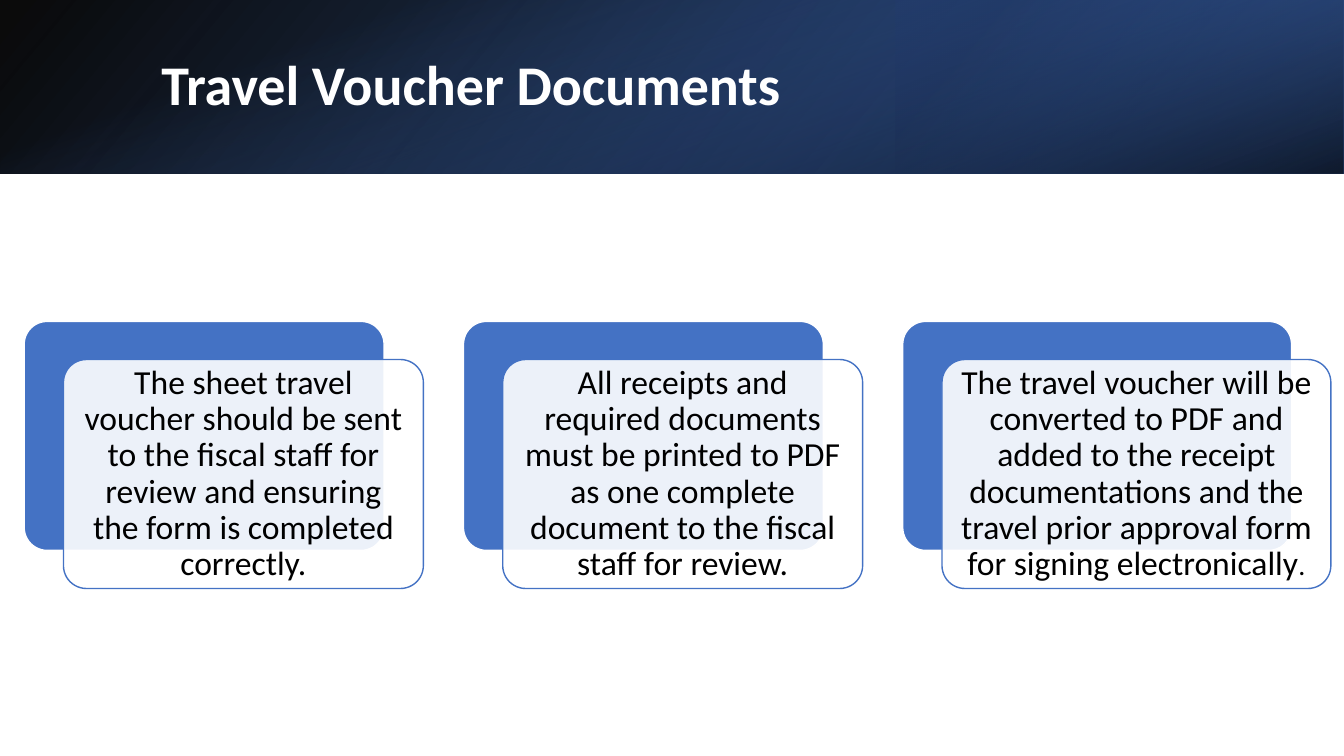
from dataclasses import dataclass

from lxml.etree import SubElement
from pptx import Presentation
from pptx.dml.color import RGBColor
from pptx.enum.shapes import MSO_SHAPE
from pptx.enum.text import MSO_ANCHOR, PP_ALIGN
from pptx.oxml.ns import qn
from pptx.shapes.autoshape import Shape
from pptx.slide import Slide
from pptx.util import Cm, Pt


@dataclass(frozen=True)
class Theme:
    font: str = "Calibri"
    blue: str = "4472C4"
    deep_blue: str = "2F5597"
    navy: str = "203864"
    black: str = "000000"
    white: str = "FFFFFF"
    title_size: int = 40
    body_size: int = 24
    ending_size: int = 20
    panel_opacity: int = 90


@dataclass(frozen=True)
class Stop:
    position: int
    color: str
    opacity: int


@dataclass(frozen=True)
class Band:
    left: float
    top: float
    width: float
    height: float
    rotation: int
    flipped: bool
    angle: int
    stops: tuple[Stop, ...]


@dataclass(frozen=True)
class Card:
    width: float
    text: str
    ending: str = ""


THEME = Theme()
PAGE_WIDTH, PAGE_HEIGHT = 33.87, 19.05
HEADER_HEIGHT = 4.37
BAND_SHIFT = (PAGE_WIDTH - HEADER_HEIGHT) / 2
ACCENT_WIDTH = PAGE_WIDTH / 3

CARD_LEFT, CARD_TOP, CARD_HEIGHT = 0.61, 8.1, 5.77
CARD_PITCH = 11.07
PANEL_SHIFT_X, PANEL_SHIFT_Y = 0.99, 0.96
PANEL_INSET = 0.25

BANDS = (
    Band(0, 0, PAGE_WIDTH, HEADER_HEIGHT, 0, True, 140,
         (Stop(0, THEME.black, 96), Stop(100, THEME.deep_blue, 100))),
    Band(PAGE_WIDTH - ACCENT_WIDTH, 0, ACCENT_WIDTH, HEADER_HEIGHT, 180, True, 320,
         (Stop(19, THEME.navy, 68), Stop(100, THEME.blue, 79))),
    Band(BAND_SHIFT, -BAND_SHIFT, HEADER_HEIGHT, PAGE_WIDTH, 90, False, 340,
         (Stop(23, THEME.blue, 0), Stop(99, THEME.black, 74))),
)

CARDS = (
    Card(9.07, "The sheet travel voucher should be sent to the fiscal staff for review "
               "and ensuring the form is completed correctly."),
    Card(9.07, "All receipts and required documents must be printed to PDF as one "
               "complete document to the fiscal staff for review."),
    Card(9.8, "The travel voucher will be converted to PDF and added to the receipt "
              "documentations and the travel prior approval form for signing "
              "electronically", "."),
)


def add_alpha(color_element, opacity: int) -> None:
    SubElement(color_element, qn("a:alpha")).set("val", str(opacity * 1000))


def add_band(page: Slide, band: Band) -> None:
    shape = page.shapes.add_shape(MSO_SHAPE.RECTANGLE, Cm(band.left), Cm(band.top),
                                  Cm(band.width), Cm(band.height))
    shape.shadow.inherit = False
    shape.line.fill.background()
    shape.rotation = band.rotation
    properties = shape._element.spPr
    if band.flipped:
        properties.find(qn("a:xfrm")).set("flipH", "1")
    shape.fill.gradient()
    gradient = properties.find(qn("a:gradFill"))
    gradient.attrib.clear()
    for child in list(gradient):
        gradient.remove(child)
    stop_list = SubElement(gradient, qn("a:gsLst"))
    for stop in band.stops:
        entry = SubElement(stop_list, qn("a:gs"), pos=str(stop.position * 1000))
        color = SubElement(entry, qn("a:srgbClr"), val=stop.color)
        add_alpha(color, stop.opacity)
    SubElement(gradient, qn("a:lin"), ang=str(band.angle * 60000), scaled="0")


def style_span(span, size: int, color: str, bold: bool = False) -> None:
    span.font.name = THEME.font
    span.font.size = Pt(size)
    span.font.bold = bold
    span.font.color.rgb = RGBColor.from_string(color)


def add_title(page: Slide, text: str) -> None:
    title = page.shapes.title
    page.shapes._spTree.append(title._element)
    title.left, title.top = Cm(3.81), Cm(0.97)
    title.width, title.height = Cm(27.89), Cm(2.44)
    frame = title.text_frame
    frame.text = text
    frame.vertical_anchor = MSO_ANCHOR.MIDDLE
    para = frame.paragraphs[0]
    para.alignment = PP_ALIGN.LEFT
    para.line_spacing = 0.9
    style_span(para.runs[0], THEME.title_size, THEME.white, bold=True)


def add_rounded(page: Slide, left: float, top: float, width: float,
                fill: str, line: str) -> Shape:
    box = page.shapes.add_shape(MSO_SHAPE.ROUNDED_RECTANGLE, Cm(left), Cm(top),
                                Cm(width), Cm(CARD_HEIGHT))
    box.adjustments[0] = 0.1
    box.shadow.inherit = False
    box.fill.solid()
    box.fill.fore_color.rgb = RGBColor.from_string(fill)
    box.line.color.rgb = RGBColor.from_string(line)
    box.line.width = Pt(1)
    return box


def add_card(page: Slide, card: Card, left: float) -> None:
    add_rounded(page, left, CARD_TOP, card.width, THEME.blue, THEME.white)
    panel = add_rounded(page, left + PANEL_SHIFT_X, CARD_TOP + PANEL_SHIFT_Y,
                        card.width, THEME.white, THEME.blue)
    solid = panel._element.spPr.find(qn("a:solidFill"))
    add_alpha(solid[0], THEME.panel_opacity)
    frame = panel.text_frame
    frame.text = card.text
    frame.word_wrap = True
    frame.vertical_anchor = MSO_ANCHOR.MIDDLE
    frame.margin_left = frame.margin_right = Cm(PANEL_INSET)
    frame.margin_top = frame.margin_bottom = Cm(PANEL_INSET)
    para = frame.paragraphs[0]
    para.alignment = PP_ALIGN.CENTER
    para.line_spacing = 0.9
    style_span(para.runs[0], THEME.body_size, THEME.black)
    if card.ending:
        span = para.add_run()
        span.text = card.ending
        style_span(span, THEME.ending_size, THEME.black)


def main() -> None:
    deck = Presentation()
    deck.slide_width, deck.slide_height = Cm(PAGE_WIDTH), Cm(PAGE_HEIGHT)
    page = deck.slides.add_slide(deck.slide_layouts[5])
    for band in BANDS:
        add_band(page, band)
    add_title(page, "Travel Voucher Documents")
    for index, card in enumerate(CARDS):
        add_card(page, card, CARD_LEFT + index * CARD_PITCH)
    deck.save("out.pptx")


if __name__ == "__main__":
    main()
